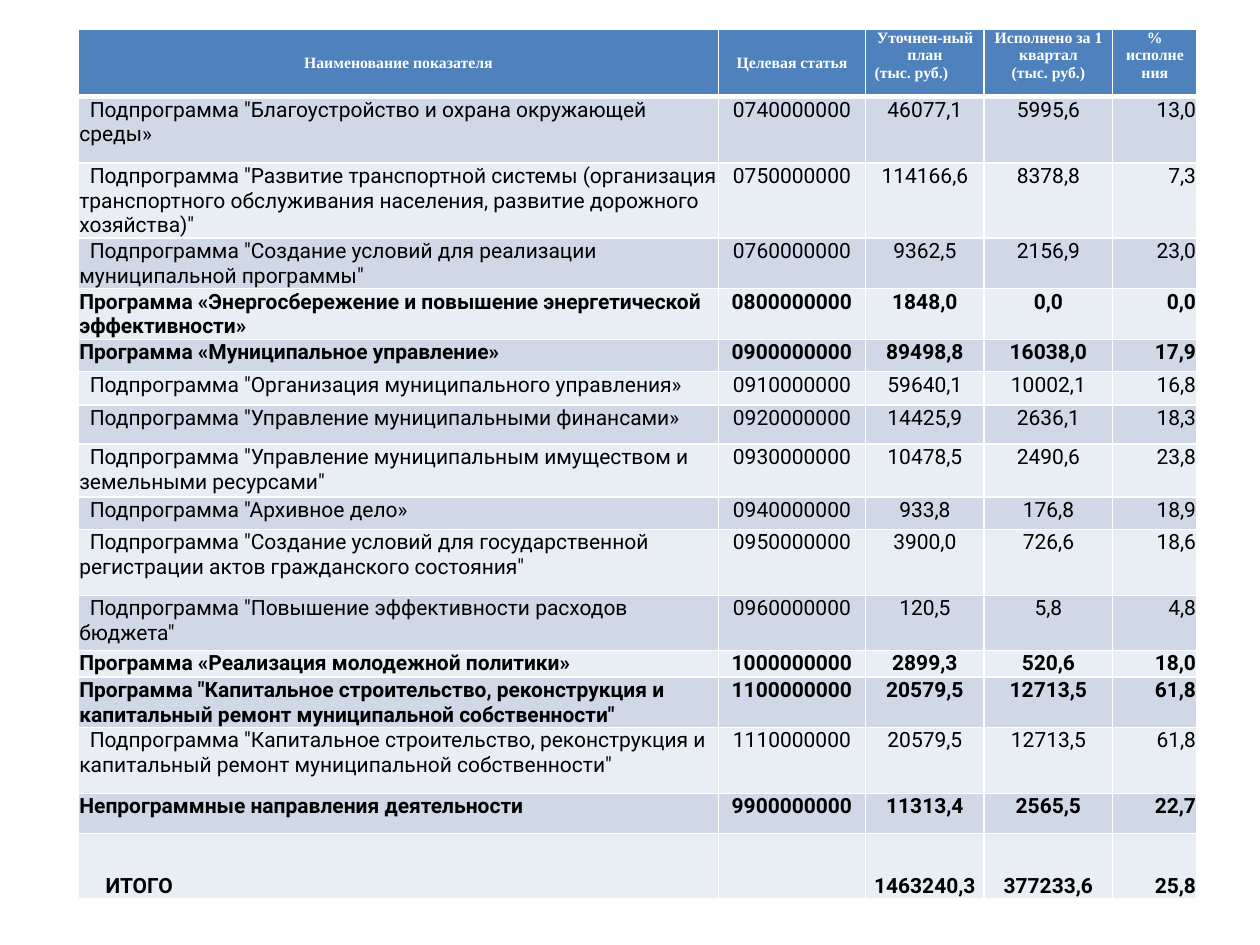
from lxml.etree import SubElement
from pptx import Presentation
from pptx.dml.color import RGBColor
from pptx.enum.text import MSO_ANCHOR, PP_ALIGN
from pptx.oxml.ns import qn
from pptx.util import Cm, Pt

COLORS = {
    "header": "4F81BD",
    "odd_row": "D0D8E8",
    "even_row": "E9EDF4",
    "border": "FFFFFF",
    "header_text": "FFFFFF",
    "body_text": "000000",
}
COLUMN_WIDTHS = [12.9, 2.97, 2.39, 2.59, 1.7]
ROW_HEIGHTS = [1.36, 1.34, 1.51, 1.02, 1.02, 0.65, 0.67, 0.79, 1.07,
               0.65, 1.33, 1.11, 0.54, 1.01, 1.33, 0.81, 1.31]
HEADERS = [
    "Наименование показателя",
    "Целевая статья",
    "Уточнен-ный план\n(тыс. руб.)",
    "Исполнено за 1 квартал\n(тыс. руб.)",
    "% исполнения",
]
BUDGET_ROWS = [
    ('Подпрограмма "Благоустройство и охрана окружающей среды»',
     "0740000000", "46077,1", "5995,6", "13,0"),
    ('Подпрограмма "Развитие транспортной системы (организация транспортного '
     'обслуживания населения, развитие дорожного хозяйства)"',
     "0750000000", "114166,6", "8378,8", "7,3"),
    ('Подпрограмма "Создание условий для реализации муниципальной программы"',
     "0760000000", "9362,5", "2156,9", "23,0"),
    ("Программа «Энергосбережение и повышение энергетической эффективности»",
     "0800000000", "1848,0", "0,0", "0,0"),
    ("Программа «Муниципальное управление»",
     "0900000000", "89498,8", "16038,0", "17,9"),
    ('Подпрограмма "Организация муниципального управления»',
     "0910000000", "59640,1", "10002,1", "16,8"),
    ('Подпрограмма "Управление муниципальными финансами»',
     "0920000000", "14425,9", "2636,1", "18,3"),
    ('Подпрограмма "Управление муниципальным имуществом и земельными ресурсами"',
     "0930000000", "10478,5", "2490,6", "23,8"),
    ('Подпрограмма "Архивное дело»',
     "0940000000", "933,8", "176,8", "18,9"),
    ('Подпрограмма "Создание условий для государственной регистрации '
     'актов гражданского состояния"',
     "0950000000", "3900,0", "726,6", "18,6"),
    ('Подпрограмма "Повышение эффективности расходов бюджета"',
     "0960000000", "120,5", "5,8", "4,8"),
    ("Программа «Реализация молодежной политики»",
     "1000000000", "2899,3", "520,6", "18,0"),
    ('Программа "Капитальное строительство, реконструкция и капитальный ремонт '
     'муниципальной собственности"',
     "1100000000", "20579,5", "12713,5", "61,8"),
    ('Подпрограмма "Капитальное строительство, реконструкция и капитальный ремонт '
     'муниципальной собственности"',
     "1110000000", "20579,5", "12713,5", "61,8"),
    ("Непрограммные направления деятельности",
     "9900000000", "11313,4", "2565,5", "22,7"),
    ("ИТОГО", "", "1463240,3", "377233,6", "25,8"),
]
ALIGNMENTS = [PP_ALIGN.LEFT] + [PP_ALIGN.CENTER] * 3 + [PP_ALIGN.RIGHT]


def set_borders(cell, top=1, bottom=1):
    """Draw the four white cell borders, with widths in points."""
    properties = cell._tc.get_or_add_tcPr()
    widths = {"a:lnL": 1, "a:lnR": 1, "a:lnT": top, "a:lnB": bottom}
    for tag, width in widths.items():
        line = SubElement(properties, qn(tag), w=str(Pt(width)))
        fill = SubElement(line, qn("a:solidFill"))
        SubElement(fill, qn("a:srgbClr"), val=COLORS["border"])


def set_cell(cell, text, fill, anchor, side, top):
    """Set the text, fill, anchor and margins of a cell."""
    cell.text_frame.text = text
    cell.fill.solid()
    cell.fill.fore_color.rgb = RGBColor.from_string(COLORS[fill])
    cell.vertical_anchor = anchor
    cell.margin_left = cell.margin_right = Cm(side)
    cell.margin_top, cell.margin_bottom = Cm(top), Cm(0)


def format_text(cell, font, size, color, bold, alignment):
    """Format every paragraph and run of a cell."""
    for para in cell.text_frame.paragraphs:
        para.alignment = alignment
        para.font.size = Pt(size)
        for span in para.runs:
            span.font.name = font
            span.font.size = Pt(size)
            span.font.bold = bold
            span.font.color.rgb = RGBColor.from_string(COLORS[color])


def indent_first_line(cell, indent):
    """Indent the first line of a cell."""
    properties = cell.text_frame.paragraphs[0]._p.get_or_add_pPr()
    properties.set("marL", "0")
    properties.set("indent", str(Cm(indent)))


def fill_header(table):
    """Fill the heading row."""
    for column, text in enumerate(HEADERS):
        cell = table.cell(0, column)
        anchor = MSO_ANCHOR.MIDDLE if column < 2 else MSO_ANCHOR.TOP
        set_borders(cell, bottom=3)
        set_cell(cell, text, "header", anchor, 0.18, 0)
        format_text(cell, "Times New Roman", 9, "header_text", True, PP_ALIGN.CENTER)
    table.cell(0, 2).text_frame.paragraphs[1].alignment = PP_ALIGN.LEFT


def fill_row(table, row, values):
    """Fill one budget row, bold unless it is a subprogramme."""
    is_subprogram = values[0].startswith("Подпрограмма")
    is_total = row == len(BUDGET_ROWS)
    fill = "odd_row" if row % 2 else "even_row"
    anchor = MSO_ANCHOR.BOTTOM if is_total else MSO_ANCHOR.TOP
    for column, text in enumerate(values):
        cell = table.cell(row, column)
        set_borders(cell, top=3 if row == 1 else 1)
        set_cell(cell, text, fill, anchor, 0.02, 0.02)
        format_text(cell, "Roboto", 12, "body_text", not is_subprogram, ALIGNMENTS[column])
    if is_subprogram or is_total:
        indent_first_line(table.cell(row, 0), 0.53 if is_total else 0.21)


def add_budget_table(page):
    """Add the budget table with its column widths and row heights."""
    frame = page.shapes.add_table(
        len(ROW_HEIGHTS), len(COLUMN_WIDTHS), Cm(1.58), Cm(0.59),
        Cm(sum(COLUMN_WIDTHS)), Cm(sum(ROW_HEIGHTS)))
    table = frame.table
    for column, width in zip(table.columns, COLUMN_WIDTHS):
        column.width = Cm(width)
    for row, height in zip(table.rows, ROW_HEIGHTS):
        row.height = Cm(height)
    fill_header(table)
    for row, values in enumerate(BUDGET_ROWS, start=1):
        fill_row(table, row, values)


def main():
    """Build the budget slide and save the deck."""
    deck = Presentation()
    deck.slide_width, deck.slide_height = Cm(25.4), Cm(19.05)
    page = deck.slides.add_slide(deck.slide_layouts[6])
    add_budget_table(page)
    deck.save("out.pptx")


if __name__ == "__main__":
    main()
